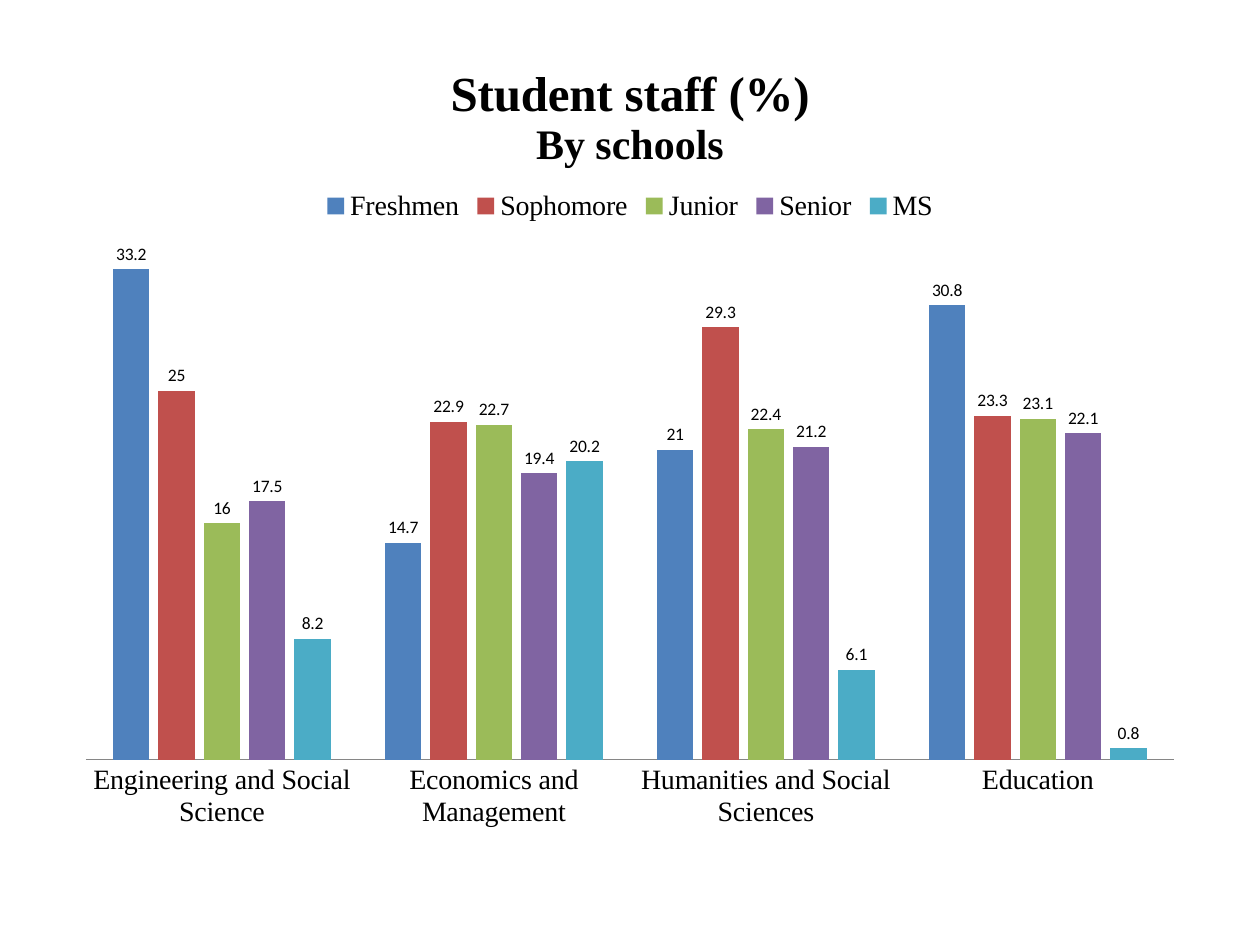
from pptx import Presentation
from pptx.chart.data import CategoryChartData
from pptx.dml.color import RGBColor
from pptx.enum.chart import XL_CHART_TYPE as ChartType
from pptx.enum.chart import XL_LABEL_POSITION as LabelPosition
from pptx.enum.chart import XL_LEGEND_POSITION as LegendPosition
from pptx.enum.chart import XL_TICK_LABEL_POSITION as TickLabels
from pptx.enum.chart import XL_TICK_MARK as TickMark
from pptx.oxml import parse_xml
from pptx.oxml.ns import nsdecls
from pptx.util import Emu, Pt

PX_PER_INCH = 126
SERIF, SANS = "Times New Roman", "Calibri"
SCHOOLS = [
    "Engineering and Social Science",
    "Economics and Management",
    "Humanities and Social Sciences",
    "Education",
]
# Class year: (colour, share in each school)
STAFF = {
    "Freshmen": ("4F81BD", [33.2, 14.7, 21, 30.8]),
    "Sophomore": ("C0504D", [25, 22.9, 29.3, 23.3]),
    "Junior": ("9BBB59", [16, 22.7, 22.4, 23.1]),
    "Senior": ("8064A2", [17.5, 19.4, 21.2, 22.1]),
    "MS": ("4BACC6", [8.2, 20.2, 6.1, 0.8]),
}


def px(length):
    return Emu(round(length * 914400 / PX_PER_INCH))


def color(hex_string):
    return RGBColor.from_string(hex_string)


def format_font(font, size, name=SERIF, bold=False, fill="000000"):
    font.size = Pt(size)
    font.name = name
    font.bold = bold
    font.color.rgb = color(fill)


def write_text(paragraph, text, **font_format):
    run = paragraph.add_run()
    run.text = text
    format_font(run.font, **font_format)


def place_plot(chart, box, left, top, width, height):
    """Fix the inner plot area, given in px relative to the chart's box."""
    shares = {"x": left / box[2], "y": top / box[3],
              "w": width / box[2], "h": height / box[3]}
    values = "".join(f'<c:{key} val="{share:.4f}"/>' for key, share in shares.items())
    plot_area = chart.element.xpath("c:chart/c:plotArea")[0]
    for old_layout in plot_area.xpath("c:layout"):
        plot_area.remove(old_layout)
    plot_area.insert(0, parse_xml(
        f'<c:layout {nsdecls("c")}><c:manualLayout><c:layoutTarget val="inner"/>'
        f'<c:xMode val="edge"/><c:yMode val="edge"/>{values}'
        '</c:manualLayout></c:layout>'))


def format_title(chart):
    chart.has_title = True
    frame = chart.chart_title.text_frame
    write_text(frame.paragraphs[0], "Student staff (%)", size=28, bold=True)
    write_text(frame.add_paragraph(), "By schools", size=24, bold=True)


def format_legend(chart):
    chart.has_legend = True
    chart.legend.position = LegendPosition.TOP
    chart.legend.include_in_layout = False
    format_font(chart.legend.font, 16)


def format_axes(chart):
    schools, shares = chart.category_axis, chart.value_axis
    schools.major_tick_mark = TickMark.NONE
    schools.tick_label_position = TickLabels.NEXT_TO_AXIS
    schools.format.line.color.rgb = color("868686")
    format_font(schools.tick_labels.font, 16)
    shares.minimum_scale, shares.maximum_scale = 0, 35
    shares.has_major_gridlines = False
    shares.visible = False


def format_columns(plot):
    plot.gap_width, plot.overlap = 150, -25
    plot.vary_by_categories = False
    for series, (fill, _) in zip(plot.series, STAFF.values()):
        series.format.fill.solid()
        series.format.fill.fore_color.rgb = color(fill)
        series.invert_if_negative = False
        labels = series.data_labels
        labels.show_value = True
        labels.position = LabelPosition.OUTSIDE_END
        format_font(labels.font, 10, name=SANS)


def add_staff_chart(slide, box):
    data = CategoryChartData()
    data.categories = SCHOOLS
    for year, (_, shares) in STAFF.items():
        data.add_series(year, shares)
    chart = slide.shapes.add_chart(
        ChartType.COLUMN_CLUSTERED, *map(px, box), data).chart
    format_font(chart.font, 10, name=SANS)
    format_title(chart)
    format_legend(chart)
    format_axes(chart)
    format_columns(chart.plots[0])
    place_plot(chart, box, left=23, top=204, width=1088, height=517)


def main():
    presentation = Presentation()
    presentation.slide_width, presentation.slide_height = px(1260), px(945)
    slide = presentation.slides.add_slide(presentation.slide_layouts[6])
    add_staff_chart(slide, (63, 39, 1134, 805))
    presentation.save("out.pptx")


if __name__ == "__main__":
    main()
